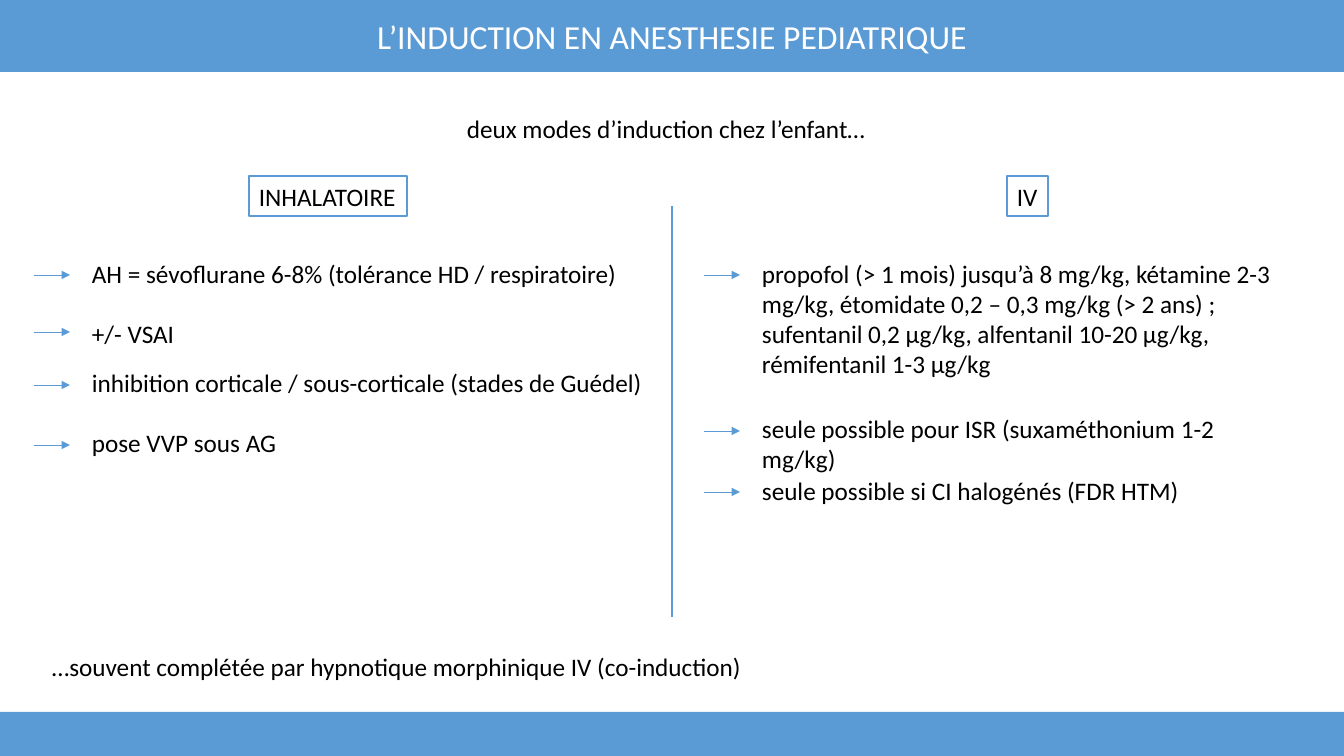
import pptx
import pptx.dml.color
import pptx.enum.shapes
import pptx.enum.text
import pptx.oxml.ns
import pptx.util
from lxml import etree

PX = 914400 / 100.8  # EMU per px
BLUE = pptx.dml.color.RGBColor(0x5B, 0x9B, 0xD5)
WHITE = pptx.dml.color.RGBColor(0xFF, 0xFF, 0xFF)
BLACK = pptx.dml.color.RGBColor(0x00, 0x00, 0x00)
SHAPE = pptx.enum.shapes.MSO_SHAPE
ALIGN = pptx.enum.text.PP_ALIGN
ANCHOR = pptx.enum.text.MSO_ANCHOR

deck = pptx.Presentation()
deck.slide_width, deck.slide_height = round(1344 * PX), round(756 * PX)
slide = deck.slides.add_slide(deck.slide_layouts[6])


def add_block(box, paragraphs=(), fill=None, outline=None, color=BLACK, size=18,
              align=ALIGN.LEFT, anchor=ANCHOR.TOP, wrap=True):
    """Add a text box, or a rectangle when a fill is given."""
    place = [round(v * PX) for v in box]
    if fill is None:
        block = slide.shapes.add_textbox(*place)
    else:
        block = slide.shapes.add_shape(SHAPE.RECTANGLE, *place)
        block.shadow.inherit = False
        block.fill.solid()
        block.fill.fore_color.rgb = fill
        if outline is None:
            block.line.fill.background()
        else:
            block.line.color.rgb = outline
            block.line.width = pptx.util.Pt(1)
    frame = block.text_frame
    frame.word_wrap = wrap
    frame.vertical_anchor = anchor
    for i, words in enumerate(paragraphs):
        paragraph = frame.add_paragraph() if i else frame.paragraphs[0]
        paragraph.alignment = align
        run = paragraph.add_run()
        run.text = words
        run.font.name = "Calibri"
        run.font.size = pptx.util.Pt(size)
        run.font.color.rgb = color


def add_line(x1, y1, x2, y2, width, arrow=False):
    line = slide.shapes.add_connector(
        pptx.enum.shapes.MSO_CONNECTOR.STRAIGHT,
        *[round(v * PX) for v in (x1, y1, x2, y2)])
    line.line.color.rgb = BLUE
    line.line.width = pptx.util.Pt(width)
    if arrow:
        etree.SubElement(line.line._get_or_add_ln(),
                         pptx.oxml.ns.qn("a:tailEnd"), type="triangle")
    etree.SubElement(line._element.spPr, pptx.oxml.ns.qn("a:effectLst"))


# Title band and footer band
add_block((0, 0, 1344, 72), ["L’INDUCTION EN ANESTHESIE PEDIATRIQUE"], fill=BLUE,
          color=WHITE, size=24, align=ALIGN.CENTER, anchor=ANCHOR.MIDDLE)
add_block((0, 712, 1344, 44), fill=BLUE)

# Introduction and conclusion
add_block((457, 108, 431, 40), ["deux modes d’induction chez l’enfant…"], wrap=False)
add_block((42, 646, 828, 40),
          ["…souvent complétée par hypnotique morphinique IV (co-induction)"])

# Divider between the two modes
add_line(672, 206, 672, 617, 1.5)

# Each mode: heading box, then arrowed points (text top, arrow height, paragraphs)
modes = [
    ("INHALATOIRE", 249, 158, 34, 617, [
        (253, 275, ["AH = sévoflurane 6-8% (tolérance HD / respiratoire)"]),
        (313, 332, ["+/- VSAI"]),
        (362, 385, ["inhibition corticale / sous-corticale (stades de Guédel)"]),
        (422, 445, ["pose VVP sous AG"]),
    ]),
    ("IV", 1007, 41, 704, 548, [
        (253, 275, ["propofol (> 1 mois) jusqu’à 8 mg/kg, kétamine 2-3 mg/kg, "
                    "étomidate 0,2 – 0,3 mg/kg (> 2 ans) ;",
                    "sufentanil 0,2 µg/kg, alfentanil 10-20 µg/kg, "
                    "rémifentanil 1-3 µg/kg"]),
        (408, 431, ["seule possible pour ISR (suxaméthonium 1-2 mg/kg)"]),
        (470, 492, ["seule possible si CI halogénés (FDR HTM)"]),
    ]),
]
for heading, heading_x, heading_width, arrow_x, point_width, points in modes:
    add_block((heading_x, 176, heading_width, 40), [heading],
              fill=WHITE, outline=BLUE, wrap=False)
    for top, arrow_y, paragraphs in points:
        add_line(arrow_x, arrow_y, arrow_x + 36, arrow_y, 0.5, arrow=True)
        height = 40 if len(paragraphs) == 1 else 132
        add_block((arrow_x + 48, top, point_width, height), paragraphs)

deck.save("out.pptx")
